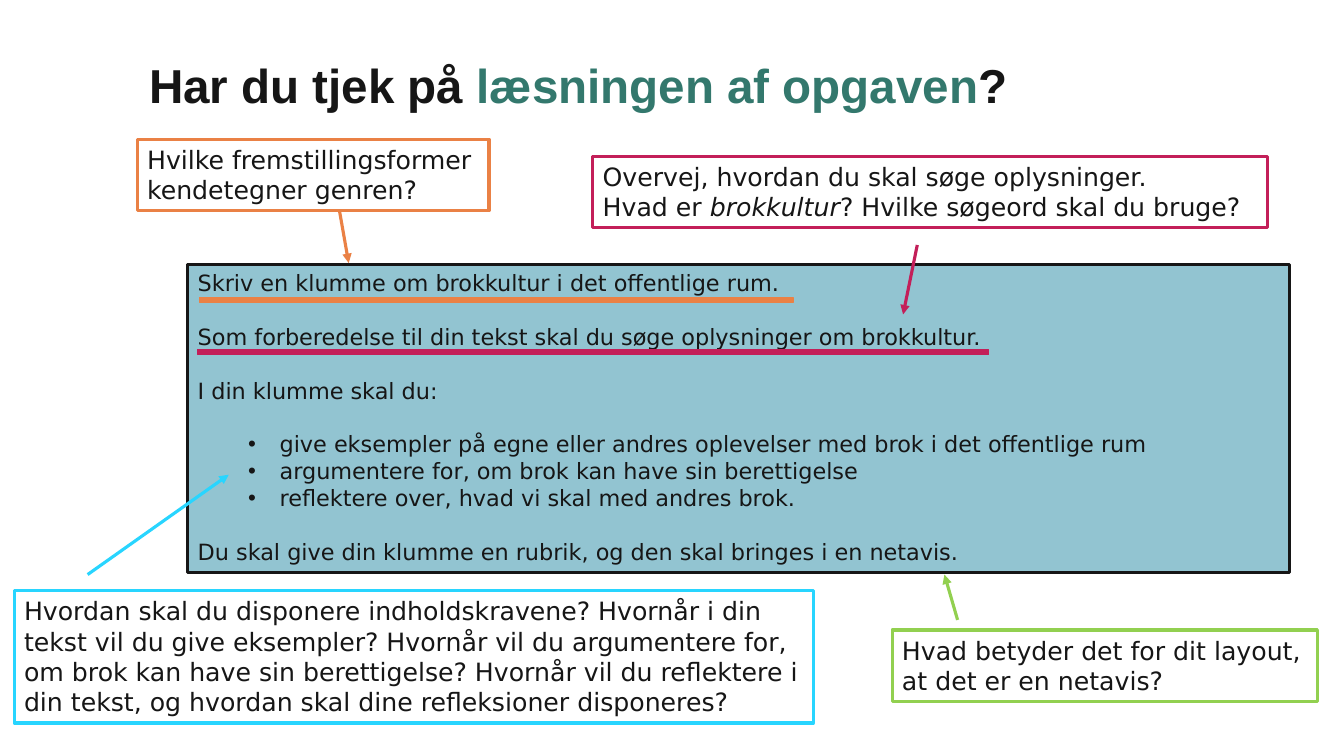
from lxml import etree
from pptx import Presentation
from pptx import util as u
from pptx.dml.color import RGBColor
from pptx.enum import shapes, text
from pptx.oxml import ns

COLORS = {
    "ink": "161616",
    "teal": "33786D",
    "panel": "92C4D1",
    "crimson": "C31F59",
    "orange": "EA8145",
    "cyan": "28D5FF",
    "green": "92D050",
}

deck = Presentation()
deck.slide_width, deck.slide_height = u.Pt(960), u.Pt(540)
page = deck.slides.add_slide(deck.slide_layouts[6])


def add_text(para, wording, size=18, font="DejaVu Sans", color="ink", bold=False, italic=False):
    span = para.add_run()
    span.text = wording
    span.font.size = u.Pt(size)
    span.font.name = font
    span.font.bold = bold
    span.font.italic = italic
    span.font.color.rgb = RGBColor.from_string(COLORS[color])


def add_box(place, line, width=2.25, fill=None):
    box = page.shapes.add_shape(shapes.MSO_SHAPE.RECTANGLE, *map(u.Pt, place))
    box.shadow.inherit = False
    box.line.color.rgb = RGBColor.from_string(COLORS[line])
    box.line.width = u.Pt(width)
    if fill:
        box.fill.solid()
        box.fill.fore_color.rgb = RGBColor.from_string(COLORS[fill])
    else:
        box.fill.background()
    box.text_frame.word_wrap = True
    box.text_frame.vertical_anchor = text.MSO_ANCHOR.TOP
    box.text_frame.paragraphs[0].alignment = text.PP_ALIGN.LEFT
    return box


title = page.shapes.add_textbox(u.Pt(106.5), u.Pt(46.8), u.Pt(759), u.Pt(26.6)).text_frame
title.word_wrap = True
title.margin_left = title.margin_top = title.margin_right = title.margin_bottom = 0
para = title.paragraphs[0]
para.line_spacing = 0.83
for wording, color in [("Har du tjek på ", "ink"), ("læsningen af opgaven", "teal"), ("?", "ink")]:
    add_text(para, wording, size=34, font="Arial", color=color, bold=True)

assignment = add_box((134.2, 188.8, 787, 220.3), "ink", fill="panel").text_frame
assignment_lines = [
    ("Skriv en klumme om brokkultur i det offentlige rum.", False, 0),
    ("Som forberedelse til din tekst skal du søge oplysninger om brokkultur.", False, 19.2),
    ("I din klumme skal du:", False, 19.2),
    ("give eksempler på egne eller andres oplevelser med brok i det offentlige rum", True, 19.2),
    ("argumentere for, om brok kan have sin berettigelse", True, 0),
    ("reflektere over, hvad vi skal med andres brok.", True, 0),
    ("Du skal give din klumme en rubrik, og den skal bringes i en netavis.", False, 19.2),
]
for index, (wording, bulleted, gap) in enumerate(assignment_lines):
    para = assignment.add_paragraph() if index else assignment.paragraphs[0]
    para.alignment = text.PP_ALIGN.LEFT
    if gap:
        para.space_before = u.Pt(gap)
    if bulleted:
        para.level = 1
        props = para._p.get_or_add_pPr()
        props.set("marL", str(u.Pt(58.5)))
        props.set("indent", str(u.Pt(-22.5)))
        etree.SubElement(props, ns.qn("a:buFont")).set("typeface", "Arial")
        etree.SubElement(props, ns.qn("a:buChar")).set("char", "•")
    add_text(para, wording, size=16)

notes = [
    ((423.4, 111.6, 481.7, 51), "crimson", ["Overvej, hvordan du skal søge oplysninger.",
     "Hvad er *brokkultur*? Hvilke søgeord skal du bruge?"]),
    ((98, 99.4, 251.3, 51), "orange", ["Hvilke fremstillingsformer kendetegner genren?"]),
    ((10.1, 422, 571, 94.5), "cyan", ["Hvordan skal du disponere indholdskravene? Hvornår i din tekst "
     "vil du give eksempler? Hvornår vil du argumentere for, om brok kan have sin berettigelse? "
     "Hvornår vil du reflektere i din tekst, og hvordan skal dine refleksioner disponeres?"]),
    ((637.2, 450, 303.8, 51), "green", ["Hvad betyder det for dit layout, at det er en netavis?"]),
]
for place, color, lines in notes:
    frame = add_box(place, color).text_frame
    para = frame.paragraphs[0]
    for index, line in enumerate(lines):
        if index:
            para.add_line_break()
        for part, wording in enumerate(line.split("*")):
            add_text(para, wording, italic=part == 1)

for place, color in [((141.1, 249.8, 565.2, 3.6), "crimson"), ((142.6, 212.4, 424, 3.6), "orange")]:
    add_box(place, color, width=1, fill=color)

arrows = [
    ((655.2, 175, 645.1, 224.6), "crimson"),
    ((242.6, 151.2, 249.1, 187.9), "orange"),
    ((62.6, 410.4, 163.4, 339.1), "cyan"),
    ((684, 442.8, 674.6, 410.4), "green"),
]
for ends, color in arrows:
    arrow = page.shapes.add_connector(shapes.MSO_CONNECTOR.STRAIGHT, *map(u.Pt, ends))
    arrow.line.color.rgb = RGBColor.from_string(COLORS[color])
    arrow.line.width = u.Pt(2.25)
    etree.SubElement(arrow.line._get_or_add_ln(), ns.qn("a:tailEnd")).set("type", "triangle")
    etree.SubElement(arrow._element.spPr, ns.qn("a:effectLst"))

deck.save("out.pptx")
